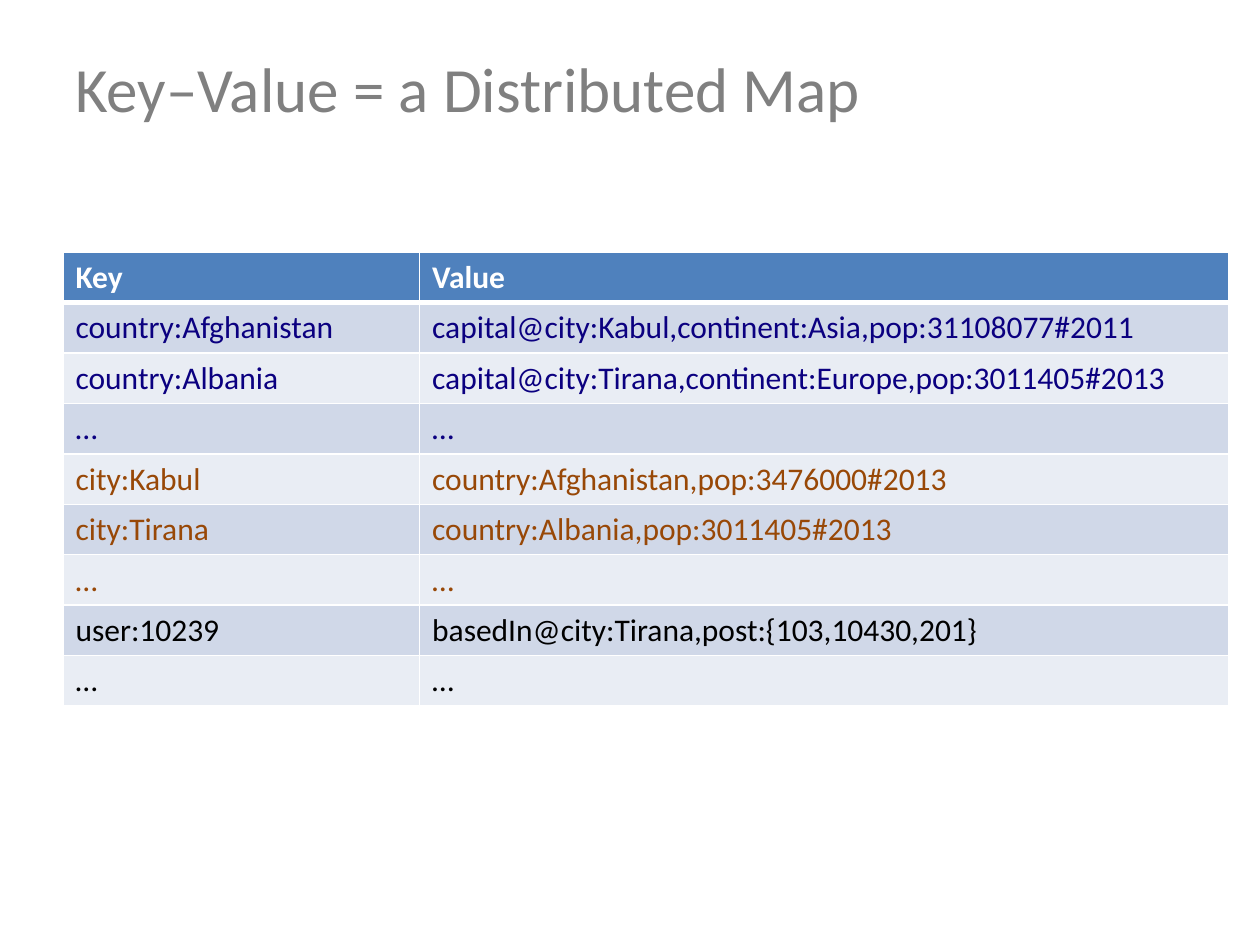
import pptx
import pptx.dml.color
import pptx.enum.text
import pptx.oxml.ns
import pptx.util
from lxml import etree

Inches = pptx.util.Inches
Pt = pptx.util.Pt
ANCHOR = pptx.enum.text.MSO_ANCHOR

TITLE = "Key–Value = a Distributed Map"
HEADER = ("Key", "Value")
GROUPS = [
    ("0B0080", [
        ("country:Afghanistan", "capital@city:Kabul,continent:Asia,pop:31108077#2011"),
        ("country:Albania", "capital@city:Tirana,continent:Europe,pop:3011405#2013"),
        ("…", "…"),
    ]),
    ("984807", [
        ("city:Kabul", "country:Afghanistan,pop:3476000#2013"),
        ("city:Tirana", "country:Albania,pop:3011405#2013"),
        ("…", "…"),
    ]),
    ("000000", [
        ("user:10239", "basedIn@city:Tirana,post:{103,10430,201}"),
        ("…", "…"),
    ]),
]
COLUMN_WIDTHS = (2.83, 6.42)
ROW_HEIGHT = 0.4
HEADER_FILL = "4F81BD"
BANDS = ("D0D8E8", "E9EDF4")
WHITE = "FFFFFF"


def rgb(value):
    return pptx.dml.color.RGBColor.from_string(value)


def write(frame, text, size, color, bold=False):
    run = frame.paragraphs[0].add_run()
    run.text = text
    run.font.name = "Calibri"
    run.font.size = Pt(size)
    run.font.bold = bold
    run.font.color.rgb = rgb(color)


def add_borders(cell, widths):
    qn = pptx.oxml.ns.qn
    properties = cell._tc.get_or_add_tcPr()
    for side, width in widths.items():
        line = etree.SubElement(properties, qn(f"a:ln{side}"), w=str(Pt(width)))
        fill = etree.SubElement(line, qn("a:solidFill"))
        etree.SubElement(fill, qn("a:srgbClr"), val=WHITE)


def add_title(slide):
    title = slide.shapes.add_textbox(Inches(0.5), Inches(0.3), Inches(9), Inches(0.78))
    title.text_frame.word_wrap = True
    title.text_frame.vertical_anchor = ANCHOR.MIDDLE
    write(title.text_frame, TITLE, 36, "808080")


def add_key_value_table(slide):
    rows = [(HEADER, WHITE)]
    rows += [(pair, color) for color, pairs in GROUPS for pair in pairs]
    table = slide.shapes.add_table(
        len(rows), len(HEADER), Inches(0.5), Inches(2),
        Inches(sum(COLUMN_WIDTHS)), Inches(ROW_HEIGHT * len(rows))).table
    for column, width in zip(table.columns, COLUMN_WIDTHS):
        column.width = Inches(width)
    for r, (pair, color) in enumerate(rows):
        is_header = r == 0
        for c, text in enumerate(pair):
            cell = table.cell(r, c)
            top, bottom = 3 if r == 1 else 1, 3 if is_header else 1
            add_borders(cell, {"L": 1, "R": 1, "T": top, "B": bottom})
            cell.fill.solid()
            cell.fill.fore_color.rgb = rgb(HEADER_FILL if is_header else BANDS[(r - 1) % 2])
            cell.vertical_anchor = ANCHOR.TOP if is_header else ANCHOR.MIDDLE
            write(cell.text_frame, text, 18, color, is_header)


def main():
    deck = pptx.Presentation()
    deck.slide_width = Inches(10)
    deck.slide_height = Inches(7.5)
    slide = deck.slides.add_slide(deck.slide_layouts[6])
    add_title(slide)
    add_key_value_table(slide)
    deck.save("out.pptx")


if __name__ == "__main__":
    main()
